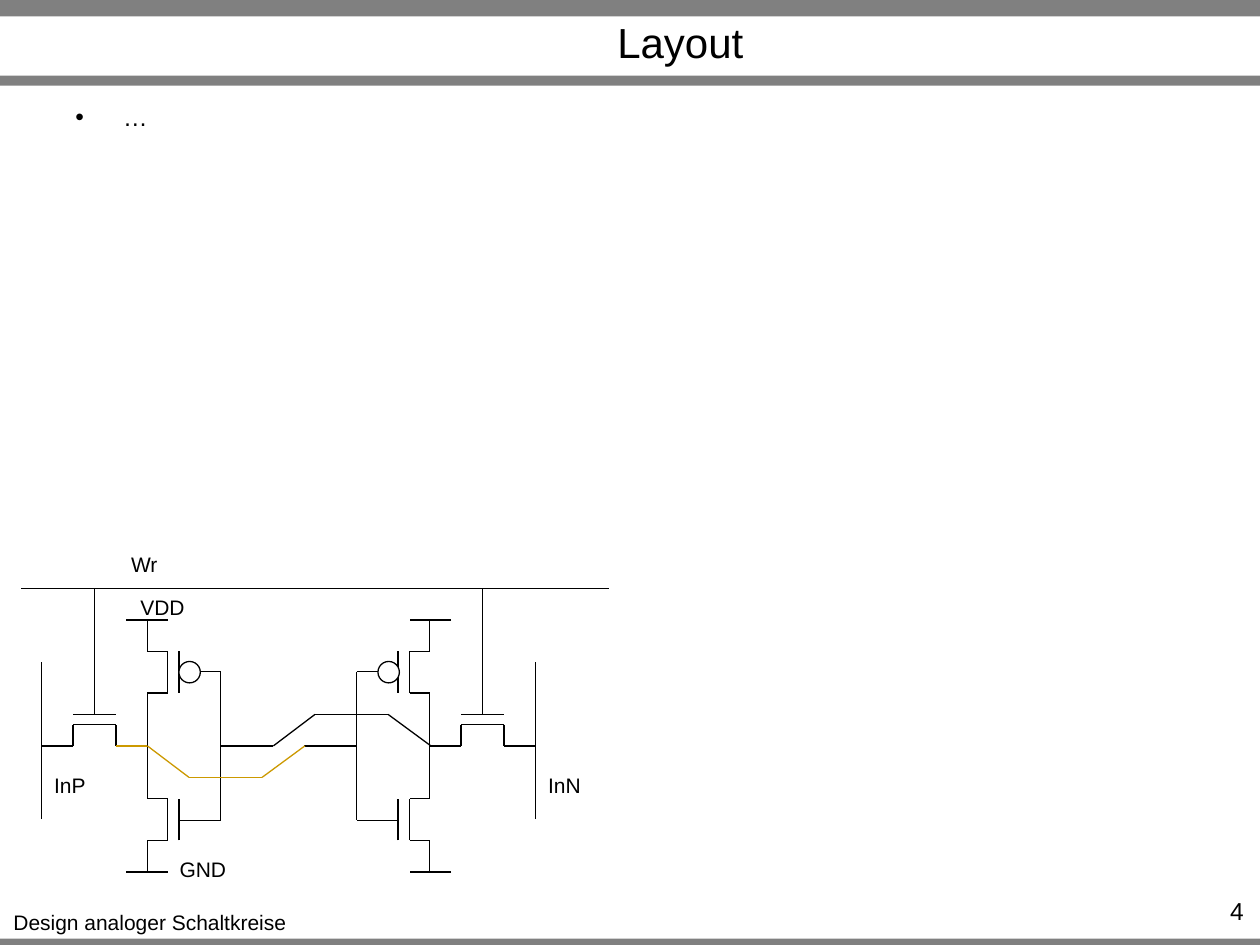
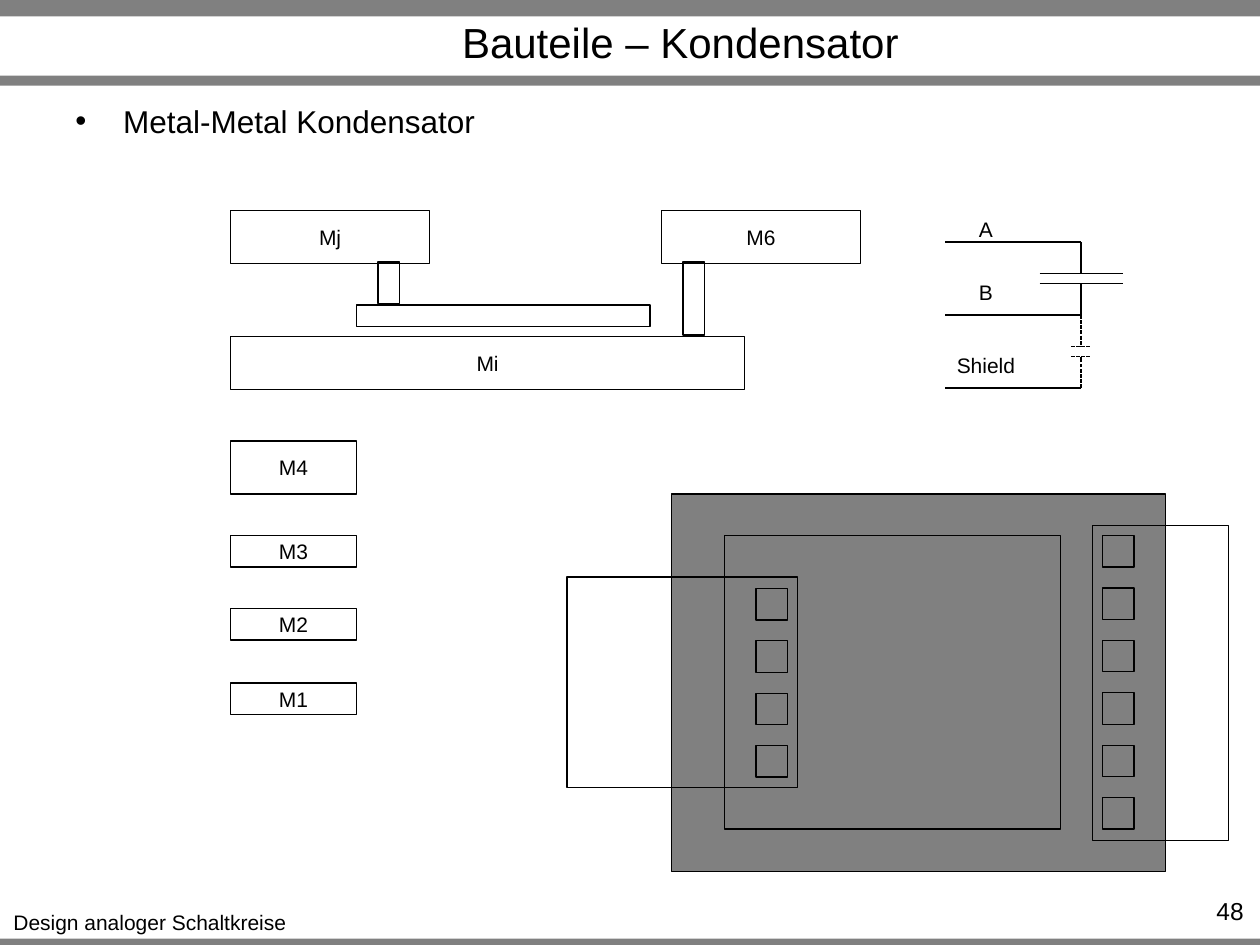
from lxml import etree
from pptx import Presentation
from pptx.dml.color import RGBColor
from pptx.enum.dml import MSO_LINE
from pptx.enum.shapes import MSO_CONNECTOR, MSO_SHAPE
from pptx.enum.text import MSO_ANCHOR, PP_ALIGN
from pptx.oxml.ns import qn
from pptx.util import Inches, Pt

BLACK = RGBColor(0x00, 0x00, 0x00)
WHITE = RGBColor(0xFF, 0xFF, 0xFF)
GRAY = RGBColor(0x80, 0x80, 0x80)
GOLD = RGBColor(0xCC, 0x99, 0x00)
FONT = "Arial"
LINE_WIDTH = Pt(0.75)
RECTANGLE = MSO_SHAPE.RECTANGLE
OVAL = MSO_SHAPE.OVAL
STRAIGHT = MSO_CONNECTOR.STRAIGHT
DASH = MSO_LINE.SQUARE_DOT
LEFT, CENTER, RIGHT = PP_ALIGN.LEFT, PP_ALIGN.CENTER, PP_ALIGN.RIGHT
TOP, MIDDLE = MSO_ANCHOR.TOP, MSO_ANCHOR.MIDDLE


def add_box(slide, kind, place, text="", size=12, align=CENTER, anchor=MIDDLE,
            fill=None, outline=BLACK, wrap=True):
    frame = [Inches(length) for length in place]
    if kind is None:
        shape = slide.shapes.add_textbox(*frame)
    else:
        shape = slide.shapes.add_shape(kind, *frame)
        shape.shadow.inherit = False
        if fill is None:
            shape.fill.background()
        else:
            shape.fill.solid()
            shape.fill.fore_color.rgb = fill
        if outline is None:
            shape.line.fill.background()
        else:
            shape.line.color.rgb = outline
            shape.line.width = LINE_WIDTH
    if text:
        text_frame = shape.text_frame
        text_frame.text = text
        text_frame.word_wrap = wrap
        text_frame.vertical_anchor = anchor
        paragraph = text_frame.paragraphs[0]
        paragraph.alignment = align
        font = paragraph.runs[0].font
        font.name = FONT
        font.size = Pt(size)
        font.color.rgb = BLACK
    return shape


def add_wire(slide, *points, color=BLACK, dash=None):
    for start, end in zip(points, points[1:]):
        corners = [Inches(length) for length in start + end]
        connector = slide.shapes.add_connector(STRAIGHT, *corners)
        connector.line.color.rgb = color
        connector.line.width = LINE_WIDTH
        if dash is not None:
            connector.line.dash_style = dash
        etree.SubElement(connector._element.spPr, qn("a:effectLst"))


presentation = Presentation()
presentation.slide_width = Inches(10)
presentation.slide_height = Inches(7.5)

slides = []
for title, bullet, bullet_size, number in [
    ("Layout", "…", 14, "4"),
    ("Bauteile – Kondensator", "Metal-Metal Kondensator", 18, "48"),
]:
    slide = presentation.slides.add_slide(presentation.slide_layouts[6])
    slides.append(slide)
    for top, height in [(7.45, 0.05), (0, 0.13), (0.6, 0.08)]:
        add_box(slide, RECTANGLE, (0, top, 10, height), fill=GRAY, outline=None)
    add_box(slide, None, (0, 7.17, 2.38, 0.3), "Design analoger Schaltkreise",
            anchor=TOP, wrap=False)
    add_box(slide, None, (1.3, 0.14, 8.2, 0.38), title, 24)
    add_box(slide, None, (9.1, 7.06, 0.87, 0.24), number, 14, RIGHT, TOP)
    body = add_box(slide, None, (0.5, 0.76, 9, 0.66), bullet, bullet_size, LEFT, TOP)
    properties = body.text_frame.paragraphs[0]._p.get_or_add_pPr()
    properties.set("marL", str(Inches(0.38)))
    properties.set("indent", str(-Inches(0.38)))
    etree.SubElement(properties, qn("a:buFont"), typeface=FONT)
    etree.SubElement(properties, qn("a:buChar"), char="•")

layout_slide, capacitor_slide = slides

CELL_WIDTH = 4.58
CELL_HEIGHT = 11.84
MID = 5.92
transistor = [
    [(1.17, MID), (1.17, 5.5), (1.33, 5.5), (1.33, 5.17), (1.17, 5.17), (1.17, 4.92)],
    [(1.42, 5.17), (1.42, 5.5)],
    [(1.42, 5.33), (1.75, 5.33), (1.75, MID)],
    [(1, 4.92), (1.33, 4.92)],
]
access_path = [
    [(1.17, MID), (0.92, MID), (0.92, 5.75), (0.58, 5.75), (0.58, MID), (0.33, MID)],
    [(0.92, 5.67), (0.58, 5.67)],
    [(0.75, 5.67), (0.75, 4.67)],
    [(0.33, 6.5), (0.33, 5.25)],
    [(1.75, MID), (2.17, MID)],
]
pull_down = [[(x, CELL_HEIGHT - y) for x, y in wire] for wire in transistor]
left_half = transistor + pull_down + access_path
right_half = [[(CELL_WIDTH - x, y) for x, y in wire] for wire in left_half]
for wire in left_half + right_half:
    add_wire(layout_slide, *wire)
for bubble_left in (1.42, 3):
    add_box(layout_slide, OVAL, (bubble_left, 5.25, 0.17, 0.17), fill=WHITE)

add_wire(layout_slide, (1.17, MID), (1.5, 6.17), (2.08, 6.17), (2.42, MID), color=GOLD)
add_wire(layout_slide, (2.17, MID), (2.5, 5.67), (3.08, 5.67), (3.42, MID))
add_wire(layout_slide, (4.83, 4.67), (0.17, 4.67))
add_wire(layout_slide, (0.92, MID), (1.17, MID), color=GOLD)

for label, left, top, width in [
    ("InP", 0.33, 6.08, 0.45),
    ("InN", 4.25, 6.08, 0.46),
    ("Wr", 0.94, 4.33, 0.41),
    ("VDD", 1.01, 4.67, 0.56),
    ("GND", 1.32, 6.75, 0.58),
]:
    add_box(layout_slide, None, (left, top, width, 0.3), label, anchor=TOP, wrap=False)

for label, *place in [
    ("M1", 1.83, 5.42, 1, 0.25),
    ("M2", 1.83, 4.83, 1, 0.25),
    ("M3", 1.83, 4.25, 1, 0.25),
    ("M4", 1.83, 3.5, 1, 0.42),
    ("Mi", 1.83, 2.67, 4.08, 0.42),
    ("Mj", 1.83, 1.67, 1.58, 0.42),
    ("", 2.83, 2.42, 2.33, 0.17),
    ("", 3, 2.08, 0.17, 0.33),
    ("", 5.42, 2.08, 0.17, 0.58),
    ("M6", 5.25, 1.67, 1.58, 0.42),
]:
    add_box(capacitor_slide, RECTANGLE, place, label)

for plate in [(5.33, 3.92, 3.92, 3), (5.75, 4.25, 2.67, 2.33)]:
    add_box(capacitor_slide, RECTANGLE, plate, fill=GRAY)
VIA_PITCH = 0.416
for via_left, first_top, count in [(8.75, 4.25, 6), (6, 4.67, 4)]:
    for row in range(count):
        via = (via_left, first_top + row * VIA_PITCH, 0.25, 0.25)
        add_box(capacitor_slide, RECTANGLE, via)
for terminal in [(8.67, 4.17, 1.08, 2.5), (4.5, 4.58, 1.83, 1.67)]:
    add_box(capacitor_slide, RECTANGLE, terminal)

for top, half_width, dash in [(1.92, 0.33, None), (2.5, 0.08, DASH)]:
    for lead_end, plate_top in [(top, top + 0.25), (top + 0.58, top + 0.33)]:
        add_wire(capacitor_slide, (8.58, lead_end), (8.58, plate_top), dash=dash)
        add_wire(capacitor_slide, (8.58 - half_width, plate_top),
                 (8.58 + half_width, plate_top), dash=dash)

for label, left, top, width, wire_top in [
    ("A", 7.67, 1.67, 0.31, 1.92),
    ("B", 7.67, 2.17, 0.31, 2.5),
    ("Shield", 7.49, 2.75, 0.67, 3.08),
]:
    add_wire(capacitor_slide, (8.58, wire_top), (7.5, wire_top))
    add_box(capacitor_slide, None, (left, top, width, 0.3), label, anchor=TOP, wrap=False)

presentation.save("out.pptx")
